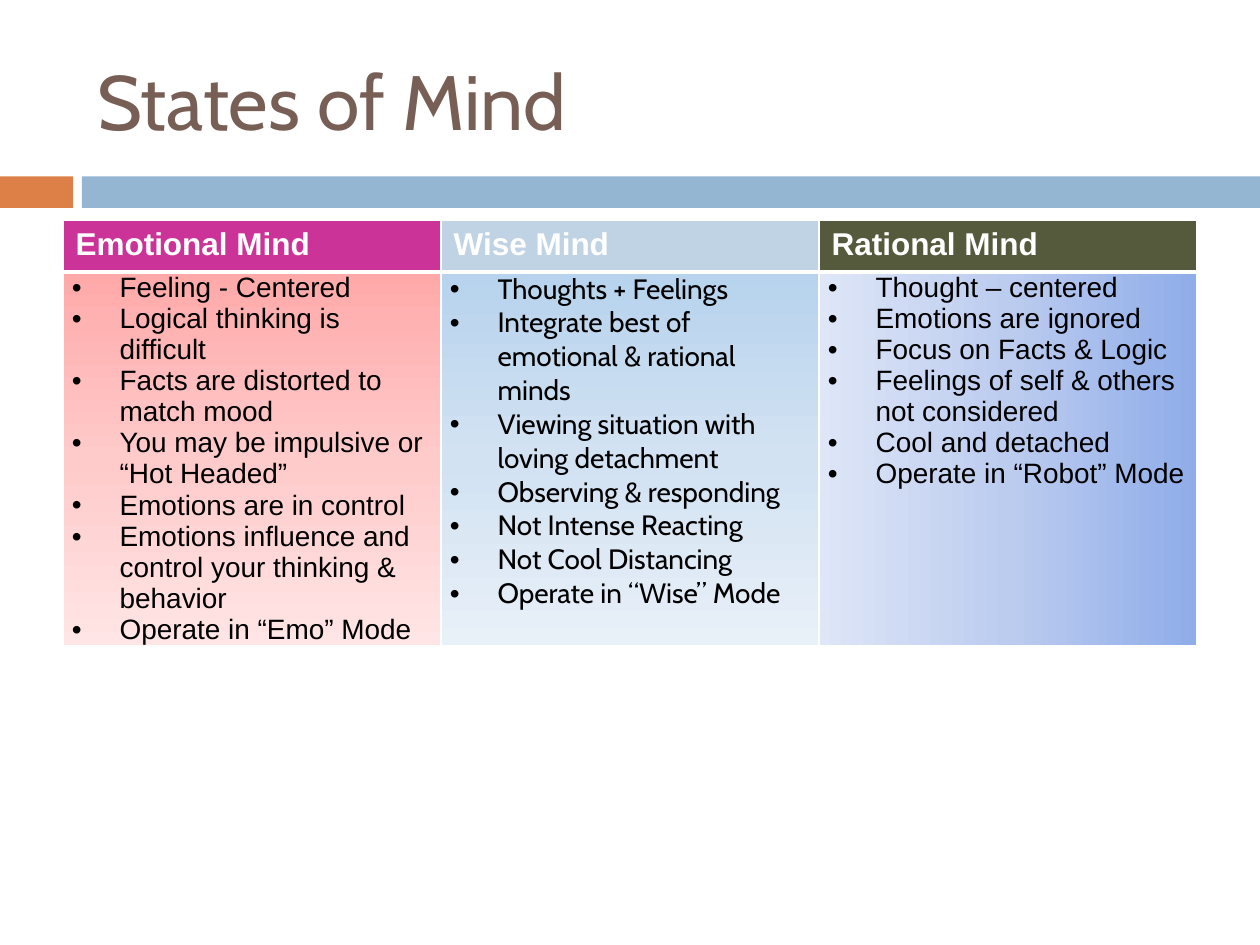
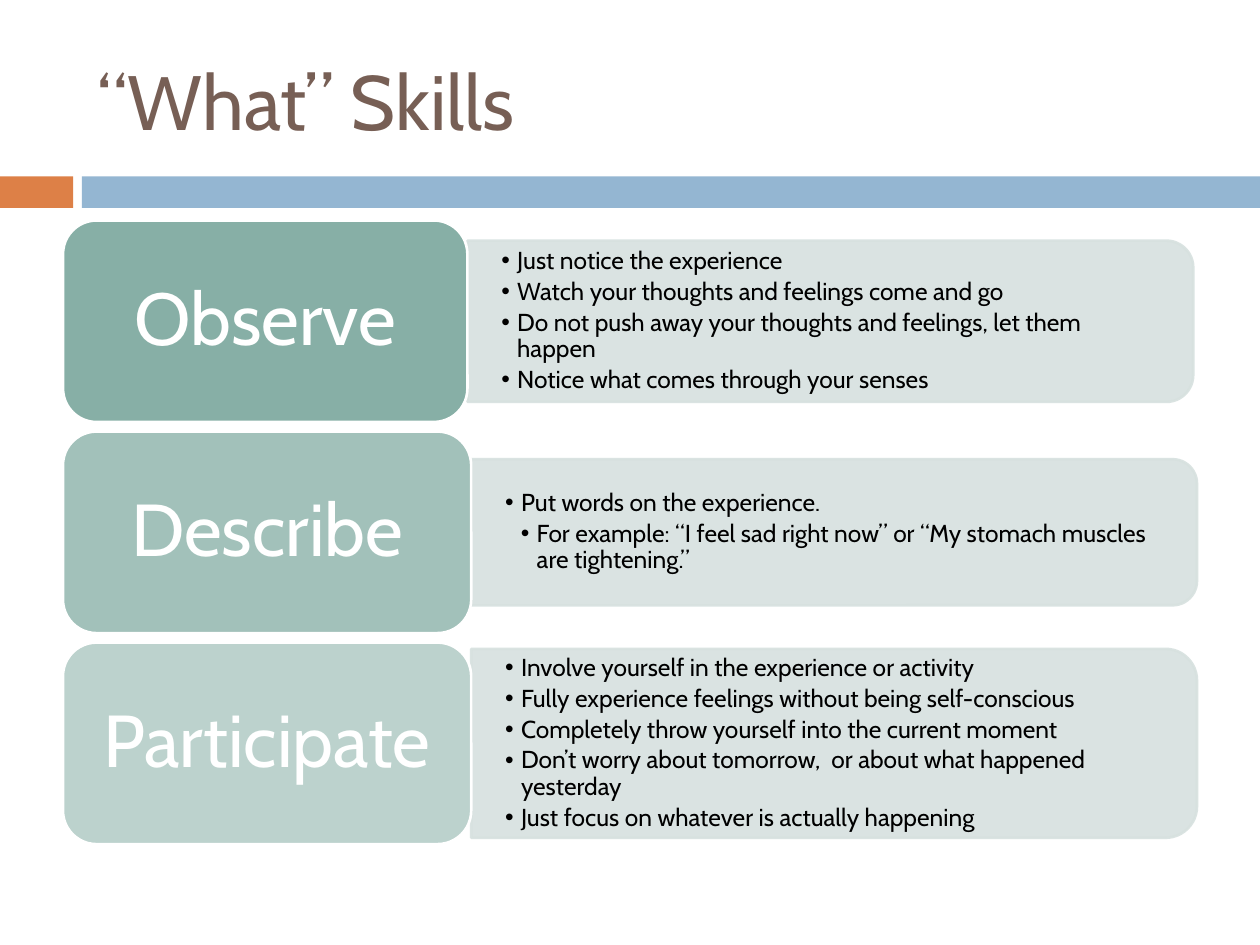
from dataclasses import dataclass
from typing import NamedTuple

from lxml.etree import SubElement
from pptx import Presentation
from pptx.dml.color import RGBColor
from pptx.enum.shapes import MSO_SHAPE as Preset
from pptx.enum.text import MSO_ANCHOR as Anchor, PP_ALIGN as Align
from pptx.oxml.ns import qn
from pptx.util import Inches, Pt


@dataclass(frozen=True)
class Theme:
    heading_font: str = "Cabin"
    plain_font: str = "Arial"
    title_size: int = 44
    label_size: int = 42
    header_size: int = 18
    cell_size: int = 16
    detail_size: int = 14
    title: str = "775F55"
    accent: str = "DD8047"
    band: str = "94B6D2"
    label: str = "7BA79D"
    panel: str = "D7E1DF"
    white: str = "FFFFFF"
    black: str = "000000"


THEME = Theme()
GRID_COLUMNS, GRID_ROWS = 40, 30
CELL = Inches(0.25)


class Box(NamedTuple):
    column: float
    row: float
    columns: float
    rows: float

    def lengths(self) -> tuple[int, ...]:
        return tuple(round(cells * CELL) for cells in self)

    def quarter_turned(self) -> "Box":
        shift = (self.columns - self.rows) / 2
        return Box(self.column + shift, self.row - shift, self.rows, self.columns)


class Mind(NamedTuple):
    name: str
    header_fill: str
    font: str
    gradient: tuple[str, str, str]
    angle: int
    traits: tuple[str, ...]


class Detail(NamedTuple):
    text: str
    level: int = 1


class Skill(NamedTuple):
    name: str
    opacity: float
    label_columns: float
    panel_rows: float
    text_rows: float
    details: tuple[Detail, ...]


TITLE_BOX = Box(2.68, 1, 35.68, 4.32)
BANDS = ((Box(0, 5.6, 2.32, 1), THEME.accent), (Box(2.6, 5.6, 37.4, 1), THEME.band))
CONTENT_COLUMN, CONTENT_ROW, CONTENT_COLUMNS = 2, 7, 36
HEADER_ROWS, TRAIT_ROWS = 1.64, 11.8
SKILL_ROWS, SKILL_PITCH = 6.4, 6.7
PANEL_COLUMNS, DETAIL_COLUMNS = 23.04, 22.8

MINDS = (
    Mind("Emotional Mind", "CC3399", THEME.plain_font, ("FFA9A9", "FFCACA", "FFE5E5"), 90, (
        "Feeling - Centered",
        "Logical thinking is difficult",
        "Facts are distorted to match mood",
        "You may be impulsive or “Hot Headed”",
        "Emotions are in control",
        "Emotions influence and control your thinking & behavior",
        "Operate in “Emo” Mode",
    )),
    Mind("Wise Mind", "BFD3E4", THEME.heading_font, ("B7D3ED", "D2E2F2", "E8F0F8"), 90, (
        "Thoughts + Feelings",
        "Integrate best of emotional & rational minds",
        "Viewing situation with loving detachment",
        "Observing & responding",
        "Not Intense Reacting",
        "Not Cool Distancing",
        "Operate in “Wise” Mode",
    )),
    Mind("Rational Mind", "565A3C", THEME.plain_font, ("8FADE9", "BCCCEF", "DEE6F7"), 180, (
        "Thought – centered",
        "Emotions are ignored",
        "Focus on Facts & Logic",
        "Feelings of self & others not considered",
        "Cool and detached",
        "Operate in “Robot” Mode",
    )),
)

SKILLS = (
    Skill("Observe", 0.9, 12.84, 5.12, 4.6, (
        Detail("Just notice the experience"),
        Detail("Watch your thoughts and feelings come and go"),
        Detail("Do not push away your thoughts and feelings, let them happen"),
        Detail("Notice what comes through your senses"),
    )),
    Skill("Describe", 0.7, 12.96, 4.64, 4.2, (
        Detail("Put words on the experience."),
        Detail("For example: “I feel sad right now” or “My stomach muscles are tightening.”", 2),
    )),
    Skill("Participate", 0.5, 12.96, 6, 5.4, (
        Detail("Involve yourself in the experience or activity"),
        Detail("Fully experience feelings without being self-conscious"),
        Detail("Completely throw yourself into the current moment"),
        Detail("Don’t worry about tomorrow,  or about what happened yesterday"),
        Detail("Just focus on whatever is actually happening"),
    )),
)


def set_font(paragraph, name: str, size: int, color: str, bold: bool = False) -> None:
    font = paragraph.font
    font.name, font.size, font.bold = name, Pt(size), bold
    font.color.rgb = RGBColor.from_string(color)


def set_margins(holder, across: float, down: float) -> None:
    holder.margin_left = holder.margin_right = Inches(across)
    holder.margin_top = holder.margin_bottom = Inches(down)


def set_bullet(paragraph, left: float, hanging: float) -> None:
    properties = paragraph._p.get_or_add_pPr()
    properties.set("marL", str(Inches(left)))
    properties.set("indent", str(-Inches(hanging)))
    SubElement(properties, qn("a:buFont"), typeface=THEME.plain_font)
    SubElement(properties, qn("a:buChar"), char="•")


def add_paragraphs(frame, texts: list[str]) -> list:
    paragraphs = [frame.paragraphs[0]]
    paragraphs += [frame.add_paragraph() for _ in texts[1:]]
    for paragraph, text in zip(paragraphs, texts):
        paragraph.text = text
    return paragraphs


def set_opacity(element, opacity: float) -> None:
    for color in element.iter(qn("a:srgbClr")):
        SubElement(color, qn("a:alpha"), val=str(round(opacity * 100000)))


def add_block(slide, preset: Preset, box: Box, fill: str):
    block = slide.shapes.add_shape(preset, *box.lengths())
    block.shadow.inherit = False
    block.fill.solid()
    block.fill.fore_color.rgb = RGBColor.from_string(fill)
    block.line.fill.background()
    return block


def set_outline(block, color: str) -> None:
    block.line.color.rgb = RGBColor.from_string(color)
    block.line.width = Pt(1.5)


def add_titled_slide(deck, heading: str):
    slide = deck.slides.add_slide(deck.slide_layouts[5])
    for box, color in BANDS:
        add_block(slide, Preset.RECTANGLE, box, color)
    title = slide.shapes.title
    title.left, title.top, title.width, title.height = TITLE_BOX.lengths()
    title.text = heading
    title.text_frame.vertical_anchor = Anchor.MIDDLE
    paragraph = title.text_frame.paragraphs[0]
    paragraph.alignment = Align.LEFT
    set_font(paragraph, THEME.heading_font, THEME.title_size, THEME.title)
    return slide


def set_borders(cell, top: float, bottom: float) -> None:
    properties = cell._tc.get_or_add_tcPr()
    for side, width in (("L", 1), ("R", 1), ("T", top), ("B", bottom)):
        line = SubElement(properties, qn(f"a:ln{side}"), w=str(Pt(width)))
        fill = SubElement(line, qn("a:solidFill"))
        SubElement(fill, qn("a:srgbClr"), val=THEME.white)


def set_gradient(cell, colors: tuple[str, str, str], angle: int) -> None:
    gradient = SubElement(cell._tc.get_or_add_tcPr(), qn("a:gradFill"), rotWithShape="1")
    stops = SubElement(gradient, qn("a:gsLst"))
    for place, color in enumerate(colors):
        stop = SubElement(stops, qn("a:gs"), pos=str(place * 50000))
        SubElement(stop, qn("a:srgbClr"), val=color)
    SubElement(gradient, qn("a:lin"), ang=str(angle * 60000), scaled="0")


def fill_mind(header, body, mind: Mind) -> None:
    set_borders(header, 1, 3)
    header.fill.solid()
    header.fill.fore_color.rgb = RGBColor.from_string(mind.header_fill)
    header.text = mind.name
    set_font(header.text_frame.paragraphs[0], THEME.plain_font, THEME.header_size, THEME.white, True)
    set_borders(body, 3, 1)
    set_gradient(body, mind.gradient, mind.angle)
    set_margins(body, 0.07, 0)
    for paragraph in add_paragraphs(body.text_frame, list(mind.traits)):
        set_bullet(paragraph, 0.38, 0.38)
        set_font(paragraph, mind.font, THEME.cell_size, THEME.black)


def add_minds_slide(deck) -> None:
    slide = add_titled_slide(deck, "States of Mind")
    box = Box(CONTENT_COLUMN, CONTENT_ROW, CONTENT_COLUMNS, HEADER_ROWS + TRAIT_ROWS)
    minds = slide.shapes.add_table(2, len(MINDS), *box.lengths()).table
    minds.horz_banding = False
    for row, rows in zip(minds.rows, (HEADER_ROWS, TRAIT_ROWS)):
        row.height = round(rows * CELL)
    for column, mind in enumerate(MINDS):
        fill_mind(minds.cell(0, column), minds.cell(1, column), mind)


def add_skill(slide, skill: Skill, top: float) -> None:
    middle = top + SKILL_ROWS / 2
    panel_column = CONTENT_COLUMN + skill.label_columns
    panel_box = Box(panel_column, middle - skill.panel_rows / 2, PANEL_COLUMNS, skill.panel_rows)
    panel = add_block(slide, Preset.ROUND_2_SAME_RECTANGLE, panel_box.quarter_turned(), THEME.panel)
    panel.rotation = 90
    set_outline(panel, THEME.panel)
    set_opacity(panel._element.spPr, 0.9)

    detail_box = Box(panel_column, middle - skill.text_rows / 2, DETAIL_COLUMNS, skill.text_rows)
    details = slide.shapes.add_textbox(*detail_box.lengths()).text_frame
    details.word_wrap = True
    details.vertical_anchor = Anchor.MIDDLE
    set_margins(details, 0.27, 0.14)
    paragraphs = add_paragraphs(details, [detail.text for detail in skill.details])
    for paragraph, detail in zip(paragraphs, skill.details):
        paragraph.level = detail.level
        paragraph.line_spacing = 0.9
        paragraph.space_after = Pt(2.5)
        set_bullet(paragraph, detail.level * 0.125, 0.125)
        set_font(paragraph, THEME.heading_font, THEME.detail_size, THEME.black)

    label_box = Box(CONTENT_COLUMN, top, skill.label_columns, SKILL_ROWS)
    label = add_block(slide, Preset.ROUNDED_RECTANGLE, label_box, THEME.label)
    set_opacity(label._element.spPr, skill.opacity)
    set_outline(label, THEME.white)
    label.text_frame.word_wrap = True
    label.text_frame.vertical_anchor = Anchor.MIDDLE
    set_margins(label.text_frame, 0.17, 0.09)
    name = add_paragraphs(label.text_frame, [skill.name])[0]
    name.alignment = Align.CENTER
    name.line_spacing = 0.9
    set_font(name, THEME.heading_font, THEME.label_size, THEME.white)


def add_skills_slide(deck) -> None:
    slide = add_titled_slide(deck, "“What” Skills")
    for place, skill in enumerate(SKILLS):
        add_skill(slide, skill, CONTENT_ROW + place * SKILL_PITCH)


def main() -> None:
    deck = Presentation()
    deck.slide_width = GRID_COLUMNS * CELL
    deck.slide_height = GRID_ROWS * CELL
    add_minds_slide(deck)
    add_skills_slide(deck)
    deck.save("out.pptx")


if __name__ == "__main__":
    main()
